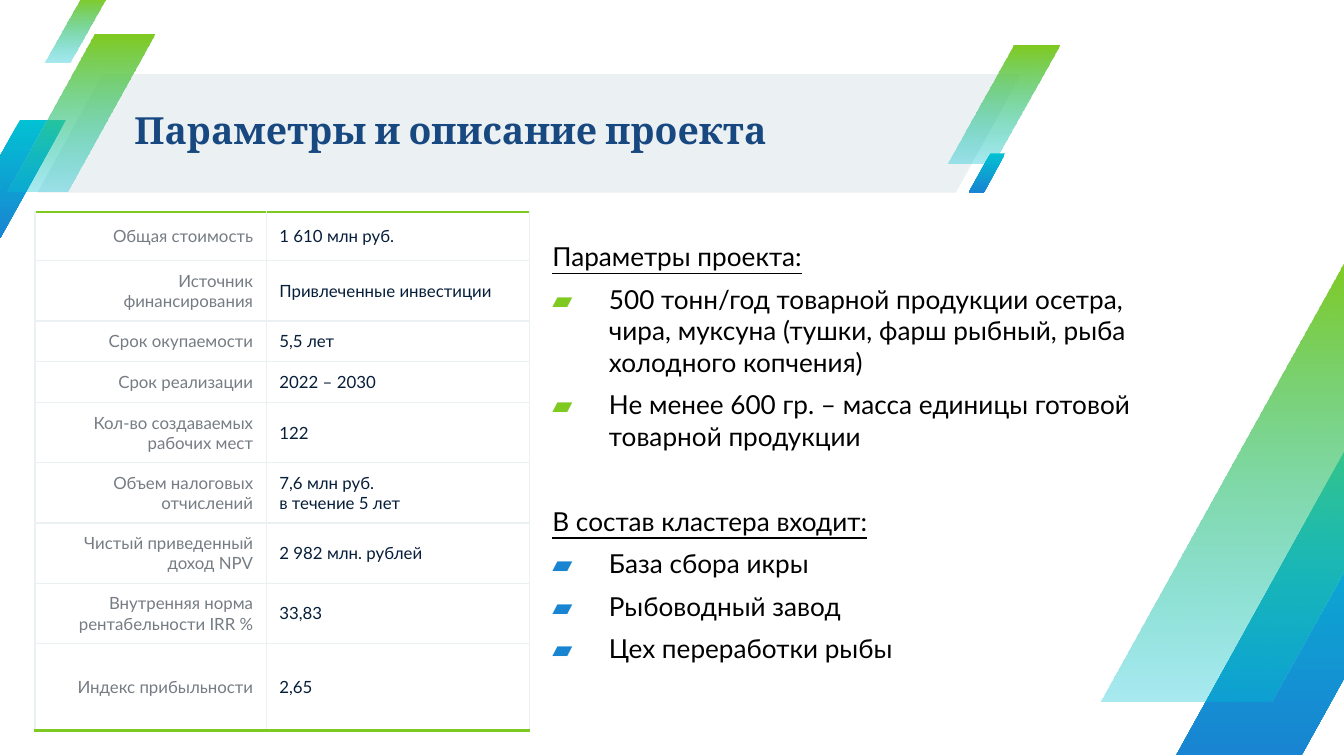
from lxml import etree
from pptx import Presentation
from pptx import util as u
from pptx.dml.color import RGBColor
from pptx.enum import shapes, text
from pptx.oxml.ns import qn

COLORS = {
    "band": "EBF0F3", "green": "7FCA20", "cyan": "02C1D3", "blue": "1985D2",
    "title": "184880", "label": "757C83", "value": "061E3A", "black": "000000",
}
GRADIENTS = {"green": ("green", "cyan", 34), "blue": ("cyan", "blue", 100)}

STRIPES = [
    ("blue", -0.86, 2.26, 2.11, 2.24),
    ("green", 17.91, 0.86, 2.11, 2.24),
    ("green", 0.15, 0.66, 2.77, 2.97),
    ("green", 0.84, -0.05, 1.17, 1.24),
    ("blue", 18.31, 2.9, 0.69, 0.74),
    ("blue", 22.23, 8.13, 5.77, 6.15),
    ("green", 20.8, 4.88, 7.87, 8.38),
]
PARAMETERS = [
    ("Общая стоимость", "1 610 млн руб.", 0.92),
    ("Источник финансирования", "Привлеченные инвестиции", 1.14),
    ("Срок окупаемости", "5,5 лет", 0.77),
    ("Срок реализации", "2022 – 2030", 0.77),
    ("Кол-во создаваемых рабочих мест", "122", 1.14),
    ("Объем налоговых отчислений", "7,6 млн руб.\nв течение 5 лет", 1.14),
    ("Чистый приведенный доход NPV", "2 982 млн. рублей", 1.14),
    ("Внутренняя норма рентабельности IRR %", "33,83", 1.14),
    ("Индекс прибыльности", "2,65", 1.64),
]
SECTIONS = [
    ("Параметры проекта:", 6, "green", [
        "500 тонн/год товарной продукции осетра, чира, муксуна "
        "(тушки, фарш рыбный, рыба холодного копчения)",
        "Не менее 600 гр. – масса единицы готовой товарной продукции",
    ]),
    ("В состав кластера входит:", 28.8, "blue", [
        "База сбора икры", "Рыбоводный завод", "Цех переработки рыбы",
    ]),
]


def rgb(name):
    return RGBColor.from_string(COLORS[name])


def add_color(parent, name):
    etree.SubElement(parent, qn("a:srgbClr"), val=COLORS[name])


class ProjectPage:
    body_font = "Lato"
    title_font = "Cambria"

    def __init__(self, deck):
        self.page = deck.slides.add_slide(deck.slide_layouts[5])

    def add_span(self, para, words, size, color, font=body_font):
        span = para.add_run()
        span.text = words
        span.font.size = u.Pt(size)
        span.font.name = font
        span.font.color.rgb = rgb(color)
        return span

    def parallelogram(self, left, top, width, height, slant):
        shape = self.page.shapes.add_shape(
            shapes.MSO_SHAPE.PARALLELOGRAM,
            u.Cm(left), u.Cm(top), u.Cm(width), u.Cm(height))
        shape.adjustments[0] = slant
        shape.shadow.inherit = False
        shape.line.fill.background()
        return shape

    def band(self, *place):
        shape = self.parallelogram(*place, 0.55)
        shape.fill.solid()
        shape.fill.fore_color.rgb = rgb("band")

    def stripe(self, gradient, *place):
        start, end, opacity = GRADIENTS[gradient]
        fill = self.parallelogram(*place, 0.59).fill
        fill.gradient()
        fill.gradient_angle = 270
        for stop, color in zip(fill.gradient_stops, (start, end)):
            stop.color.rgb = rgb(color)
        if opacity < 100:
            last = list(fill._fill._gradFill.iter(qn("a:srgbClr")))[-1]
            etree.SubElement(last, qn("a:alpha"), val=str(opacity * 1000))

    def clear_frame(self, frame):
        frame.word_wrap = True
        frame.auto_size = text.MSO_AUTO_SIZE.NONE
        frame.margin_left = frame.margin_right = 0
        frame.margin_top = frame.margin_bottom = 0

    def title(self, words, left, top, width, height):
        box = self.page.shapes.title
        self.page.shapes._spTree.append(box._element)
        box.left, box.top = u.Cm(left), u.Cm(top)
        box.width, box.height = u.Cm(width), u.Cm(height)
        self.clear_frame(box.text_frame)
        box.text_frame.vertical_anchor = text.MSO_ANCHOR.MIDDLE
        para = box.text_frame.paragraphs[0]
        para.alignment = text.PP_ALIGN.LEFT
        para.line_spacing = 0.9
        self.add_span(para, words, 20, "title", self.title_font).font.bold = True

    def border(self, cell, side, color, width):
        line = etree.SubElement(cell._tc.get_or_add_tcPr(), qn(f"a:ln{side}"),
                                w=str(u.Pt(width)))
        add_color(etree.SubElement(line, qn("a:solidFill")), color)

    def cell(self, cell, words, color, align, edges):
        cell.vertical_anchor = text.MSO_ANCHOR.MIDDLE
        cell.margin_left = cell.margin_right = u.Cm(0.25)
        cell.margin_top = cell.margin_bottom = u.Cm(0.18)
        for side in "LRTB":
            style = ("green", 1.5) if side in edges else ("band", 0.75)
            self.border(cell, side, *style)
        cell.fill.background()
        frame = cell.text_frame
        for index, line in enumerate(words.split("\n")):
            para = frame.add_paragraph() if index else frame.paragraphs[0]
            para.alignment = align
            self.add_span(para, line, 9, color)

    def table(self, rows, left, top, widths):
        height = sum(row[2] for row in rows)
        table = self.page.shapes.add_table(
            len(rows), len(widths), u.Cm(left), u.Cm(top),
            u.Cm(sum(widths)), u.Cm(height)).table
        table.first_row = table.horz_banding = False
        for column, width in zip(table.columns, widths):
            column.width = u.Cm(width)
        for index, (label, value, height) in enumerate(rows):
            table.rows[index].height = u.Cm(height)
            edges = {0: "T", len(rows) - 1: "B"}.get(index, "")
            self.cell(table.cell(index, 0), label, "label",
                      text.PP_ALIGN.RIGHT, edges)
            self.cell(table.cell(index, 1), value, "value",
                      text.PP_ALIGN.LEFT, edges)

    def paragraph(self, para, words, before=6, bullet=None):
        para.space_before = u.Pt(before)
        margin, indent = (1.27, -1.07) if bullet else (0.2, 0)
        properties = para._p.get_or_add_pPr()
        properties.set("marL", str(u.Cm(margin)))
        properties.set("indent", str(u.Cm(indent)))
        if bullet:
            add_color(etree.SubElement(properties, qn("a:buClr")), bullet)
            etree.SubElement(properties, qn("a:buFont"), typeface=self.body_font)
            etree.SubElement(properties, qn("a:buChar"), char="▰")
        span = self.add_span(para, words, 14, "black")
        span.font.underline = not bullet

    def description(self, sections, left, top, width, height):
        frame = self.page.shapes.add_textbox(
            u.Cm(left), u.Cm(top), u.Cm(width), u.Cm(height)).text_frame
        self.clear_frame(frame)
        for index, (heading, before, bullet, items) in enumerate(sections):
            para = frame.add_paragraph() if index else frame.paragraphs[0]
            self.paragraph(para, heading, before)
            for item in items:
                self.paragraph(frame.add_paragraph(), item, bullet=bullet)


def main():
    deck = Presentation()
    deck.slide_width, deck.slide_height = u.Cm(25.4), u.Cm(14.29)
    page = ProjectPage(deck)
    page.band(0.71, 1.4, 18.59, 2.24)
    for stripe in STRIPES:
        page.stripe(*stripe)
    page.title("Параметры и описание проекта", 2.54, 1.37, 16.74, 2.26)
    page.table(PARAMETERS, 0.66, 4.01, (4.37, 4.98))
    page.description(SECTIONS, 10.24, 4.55, 12.14, 8.33)
    deck.save("out.pptx")


if __name__ == "__main__":
    main()
